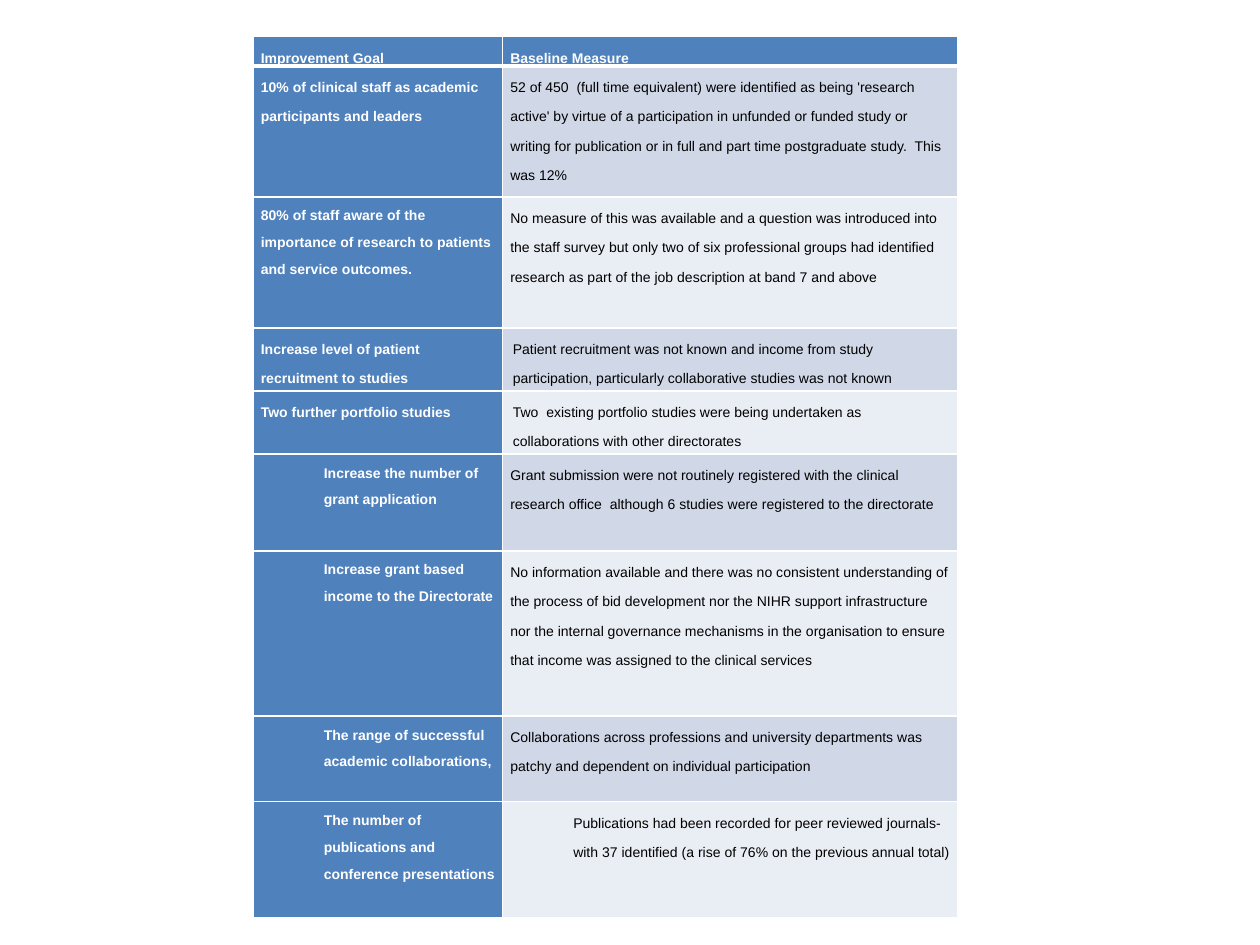
import pptx
import pptx.dml.color
import pptx.oxml
import pptx.oxml.ns
import pptx.util

Inches = pptx.util.Inches
Pt = pptx.util.Pt
RGBColor = pptx.dml.color.RGBColor

WHITE = RGBColor(0xFF, 0xFF, 0xFF)
BLACK = RGBColor(0x00, 0x00, 0x00)
BLUE = RGBColor(0x4F, 0x81, 0xBD)
BANDS = [RGBColor(0xE9, 0xED, 0xF4), RGBColor(0xD0, 0xD8, 0xE8)]

LOOSE, TIGHT = 16.8, 15.4

# Row height, then goal and measure as (text, left indent, line spacing)
ROWS = [
    (0.23, ("Improvement Goal", 0, LOOSE), ("Baseline Measure", 0, LOOSE)),
    (1.04,
     ("10% of clinical staff as academic participants and leaders", 0, LOOSE),
     ("52 of 450  (full time equivalent) were identified as being 'research active' by virtue of "
      "a participation in unfunded or funded study or writing for publication or in full and part "
      "time postgraduate study.  This was 12%", 0, LOOSE)),
    (1.04,
     ("80% of staff aware of the importance of research to patients and service outcomes.", 0, TIGHT),
     ("No measure of this was available and a question was introduced into the staff survey but "
      "only two of six professional groups had identified research as part of the job description "
      "at band 7 and above", 0, LOOSE)),
    (0.5,
     ("Increase level of patient recruitment to studies", 0, LOOSE),
     ("Patient recruitment was not known and income from study participation, particularly "
      "collaborative studies was not known", 0.02, LOOSE)),
    (0.5,
     ("Two further portfolio studies", 0, LOOSE),
     ("Two  existing portfolio studies were being undertaken as collaborations with other "
      "directorates", 0.02, LOOSE)),
    (0.77,
     ("Increase the number of grant application", 0.5, TIGHT),
     ("Grant submission were not routinely registered with the clinical research office  although "
      "6 studies were registered to the directorate", 0, LOOSE)),
    (1.31,
     ("Increase grant based income to the Directorate", 0.5, TIGHT),
     ("No information available and there was no consistent understanding of the process of bid "
      "development nor the NIHR support infrastructure nor the internal governance mechanisms in "
      "the organisation to ensure that income was assigned to the clinical services", 0, LOOSE)),
    (0.68,
     ("The range of successful academic collaborations,", 0.5, TIGHT),
     ("Collaborations across professions and university departments was patchy and dependent on "
      "individual participation", 0, LOOSE)),
    (0.92,
     ("The number of publications and conference presentations", 0.5, TIGHT),
     ("Publications had been recorded for peer reviewed journals- with 37 identified (a rise of "
      "76% on the previous annual total)", 0.5, LOOSE)),
]
COLUMN_WIDTHS = [1.98, 3.61]


def write_text(cell, text, *, indent, line_spacing, color, bold):
    cell.margin_left, cell.margin_right = Inches(0.06), Inches(0.05)
    cell.margin_top = cell.margin_bottom = 0
    paragraph = cell.text_frame.paragraphs[0]
    paragraph.line_spacing = Pt(line_spacing)
    if indent:
        properties = paragraph._p.get_or_add_pPr()
        properties.set("marL", str(Inches(indent)))
        properties.set("indent", "0")
    run = paragraph.add_run()
    run.text = text
    run.font.name = "Arial"
    run.font.size = Pt(8)
    run.font.bold = bold
    run.font.color.rgb = color


def add_borders(cell, widths):
    """Draw white cell borders; widths maps each side (L, R, T, B) to points."""
    properties = cell._tc.get_or_add_tcPr()
    for side, width in widths.items():
        properties.append(pptx.oxml.parse_xml(
            f'<a:ln{side} {pptx.oxml.ns.nsdecls("a")} w="{Pt(width)}">'
            f'<a:solidFill><a:srgbClr val="{WHITE}"/></a:solidFill></a:ln{side}>'))


presentation = pptx.Presentation()
presentation.slide_width = Inches(10)
presentation.slide_height = Inches(7.5)
slide = presentation.slides.add_slide(presentation.slide_layouts[6])

table = slide.shapes.add_table(
    len(ROWS), len(COLUMN_WIDTHS), Inches(2.01), Inches(0.29),
    Inches(sum(COLUMN_WIDTHS)), Inches(sum(row[0] for row in ROWS))).table
table.horz_banding = False
for column, width in zip(table.columns, COLUMN_WIDTHS):
    column.width = Inches(width)

for row_index, (height, *entries) in enumerate(ROWS):
    table.rows[row_index].height = Inches(height)
    for column_index, (text, indent, line_spacing) in enumerate(entries):
        cell = table.cell(row_index, column_index)
        is_heading = row_index == 0 or column_index == 0
        write_text(cell, text, indent=indent, line_spacing=line_spacing,
                   color=WHITE if is_heading else BLACK, bold=is_heading)
        add_borders(cell, {"L": 1, "R": 1,
                           "T": 3 if row_index == 1 else 1,
                           "B": 3 if row_index == 0 else 1})
        cell.fill.solid()
        cell.fill.fore_color.rgb = BLUE if is_heading else BANDS[row_index % 2]

presentation.save("out.pptx")
